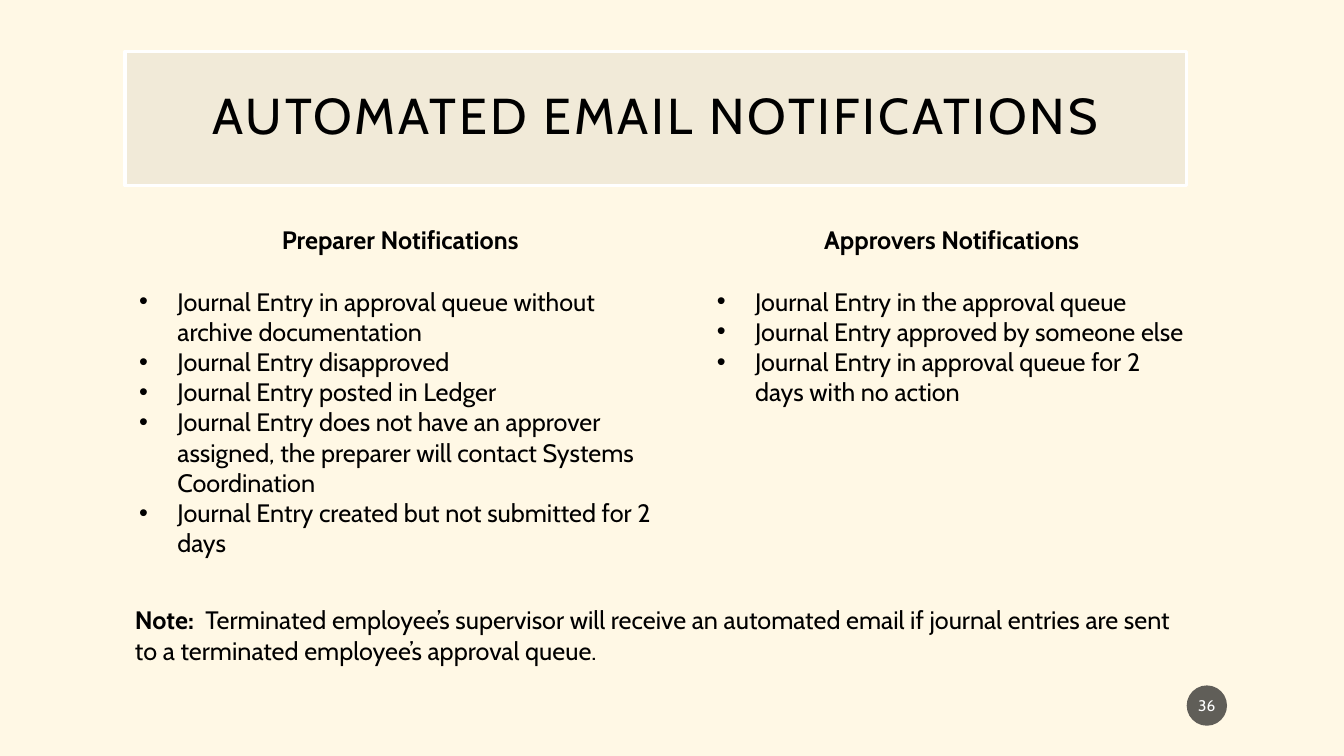
"""Build the slide on automated email notifications."""
from lxml.etree import SubElement
from pptx import Presentation
from pptx.dml.color import RGBColor
from pptx.enum.shapes import MSO_SHAPE as Shape
from pptx.enum.text import MSO_ANCHOR as Anchor, MSO_AUTO_SIZE as AutoSize, PP_ALIGN as Align
from pptx.oxml.ns import qn
from pptx.util import Inches, Pt

FONT = "Cabin"
CREAM = RGBColor(0xFF, 0xF8, 0xE5)
TAUPE = RGBColor(0xA7, 0xA0, 0x8E)
CHARCOAL = RGBColor(0x1D, 0x1D, 0x1D)
BLACK = RGBColor(0, 0, 0)
WHITE = RGBColor(0xFF, 0xFF, 0xFF)

PREPARER_ITEMS = [
    "Journal Entry in approval queue without archive documentation",
    "Journal Entry disapproved",
    "Journal Entry posted in Ledger",
    "Journal Entry does not have an approver assigned, the preparer will contact Systems Coordination",
    "Journal Entry created but not submitted for 2 days",
]
APPROVER_ITEMS = [
    "Journal Entry in the approval queue",
    "Journal Entry approved by someone else",
    "Journal Entry in approval queue for 2 days with no action",
]


def place(box, left, top, width, height):
    """Move and size a shape, in inches."""
    box.left, box.top = Inches(left), Inches(top)
    box.width, box.height = Inches(width), Inches(height)


def set_frame(box, anchor, side=0.1, edge=0.05):
    """Set wrapping, anchor and margins of a text frame and return it."""
    frame = box.text_frame
    frame.word_wrap = True
    frame.auto_size = AutoSize.NONE
    frame.vertical_anchor = anchor
    frame.margin_left = frame.margin_right = Inches(side)
    frame.margin_top = frame.margin_bottom = Inches(edge)
    return frame


def add_span(para, text, size=18, color=BLACK, bold=False):
    """Add one formatted run to a paragraph."""
    span = para.add_run()
    span.text = text
    span.font.name = FONT
    span.font.size = Pt(size)
    span.font.bold = bold
    span.font.color.rgb = color
    return span


def set_fill(box, color, opacity):
    """Fill a shape with a partly transparent colour."""
    box.fill.solid()
    box.fill.fore_color.rgb = color
    color_node = box.fill._xPr.find(qn("a:solidFill"))[0]
    SubElement(color_node, qn("a:alpha"), val=str(opacity * 1000))


def set_bullet(para, bulleted):
    """Give a paragraph a hanging bullet, or none."""
    indent = Inches(0.38) if bulleted else 0
    props = para._p.get_or_add_pPr()
    props.set("marL", str(indent))
    props.set("indent", str(-indent))
    if bulleted:
        SubElement(props, qn("a:buFont"), typeface="Arial")
        SubElement(props, qn("a:buChar"), char="•")
    else:
        SubElement(props, qn("a:buNone"))


def format_title(box, text):
    """Turn the title placeholder into the framed heading."""
    place(box, 1.24, 0.51, 10.53, 1.33)
    set_fill(box, TAUPE, 15)
    box.line.color.rgb = WHITE
    box.line.width = Pt(2.5)
    para = set_frame(box, Anchor.MIDDLE, 0.2, 0.2).paragraphs[0]
    para.alignment = Align.CENTER
    para.line_spacing = 0.9
    span = add_span(para, text, 36)
    span.font._element.set("spc", "200")


def fill_list(box, position, heading, items):
    """Fill a body placeholder with a centred heading and bulleted items."""
    place(box, *position)
    frame = set_frame(box, Anchor.TOP)
    for index, text in enumerate([heading, *items]):
        is_item = index > 0
        para = frame.add_paragraph() if is_item else frame.paragraphs[0]
        para.alignment = Align.LEFT if is_item else Align.CENTER
        para.space_before = Pt(0)
        para.space_after = Pt(0 if is_item else 22)
        set_bullet(para, is_item)
        add_span(para, text, bold=not is_item)


def add_note(page):
    """Add the note below the lists."""
    box = page.shapes.add_textbox(Inches(1.24), Inches(5.95), Inches(10.64), Inches(0.71))
    para = set_frame(box, Anchor.TOP).paragraphs[0]
    add_span(para, "Note:  ", bold=True)
    add_span(para, "Terminated employee’s supervisor will receive an automated email if journal "
                   "entries are sent to a terminated employee’s approval queue.")


def add_page_number(page, number):
    """Add the round page number badge."""
    badge = page.shapes.add_shape(Shape.OVAL, Inches(11.77), Inches(6.8), Inches(0.4), Inches(0.4))
    badge.shadow.inherit = False
    set_fill(badge, CHARCOAL, 70)
    badge.line.fill.background()
    para = set_frame(badge, Anchor.MIDDLE, 0.02).paragraphs[0]
    para.alignment = Align.CENTER
    add_span(para, number, 11, WHITE)


def main():
    """Build and save the deck."""
    deck = Presentation()
    deck.slide_width, deck.slide_height = Inches(13.33), Inches(7.5)
    page = deck.slides.add_slide(deck.slide_layouts.get_by_name("Two Content"))
    page.background.fill.solid()
    page.background.fill.fore_color.rgb = CREAM
    title, preparers, approvers = page.placeholders
    format_title(title, "AUTOMATED EMAIL NOTIFICATIONS")
    fill_list(preparers, (1.28, 2.18, 5.38, 3.43), "Preparer Notifications", PREPARER_ITEMS)
    fill_list(approvers, (7.01, 2.18, 4.86, 1.92), "Approvers Notifications", APPROVER_ITEMS)
    add_note(page)
    add_page_number(page, "36")
    deck.save("out.pptx")


if __name__ == "__main__":
    main()
